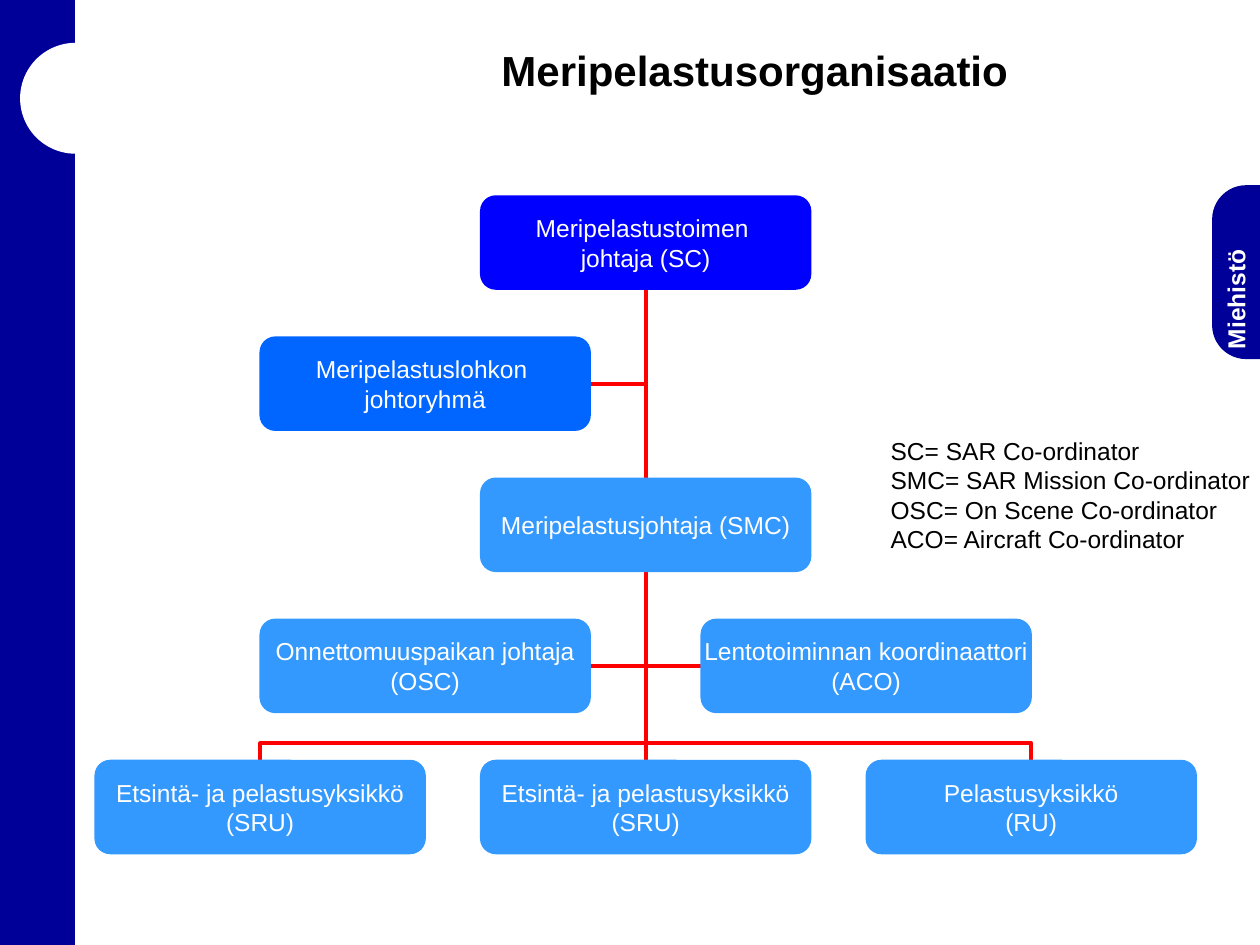
from lxml.etree import SubElement
from pptx import Presentation
from pptx.dml.color import RGBColor
from pptx.enum.shapes import MSO_CONNECTOR, MSO_SHAPE
from pptx.enum.text import MSO_ANCHOR, PP_ALIGN
from pptx.oxml.ns import qn
from pptx.util import Inches, Pt

NAVY = RGBColor(0x00, 0x00, 0x99)
BLUE = RGBColor(0x00, 0x00, 0xFF)
AZURE = RGBColor(0x00, 0x66, 0xFF)
SKY = RGBColor(0x33, 0x99, 0xFF)
RED = RGBColor(0xFF, 0x00, 0x00)
WHITE = RGBColor(0xFF, 0xFF, 0xFF)
BLACK = RGBColor(0x00, 0x00, 0x00)

CARD_W, CARD_H, ROW_STEP = 2.63, 0.75, 1.12
SIDE, WING = 1.75, 3.06
CARDS = [
    (0, 0, BLUE, "Meripelastustoimen \njohtaja (SC)"),
    (-SIDE, 1, AZURE, "Meripelastuslohkon \njohtoryhmä"),
    (0, 2, SKY, "Meripelastusjohtaja (SMC)"),
    (-SIDE, 3, SKY, "Onnettomuuspaikan johtaja\n(OSC)"),
    (SIDE, 3, SKY, "Lentotoiminnan koordinaattori\n(ACO)"),
    (-WING, 4, SKY, "Etsintä- ja pelastusyksikkö\n(SRU)"),
    (0, 4, SKY, "Etsintä- ja pelastusyksikkö\n(SRU)"),
    (WING, 4, SKY, "Pelastusyksikkö\n(RU)"),
]
TERMS = """SC= SAR Co-ordinator
SMC= SAR Mission Co-ordinator
OSC= On Scene Co-ordinator
ACO= Aircraft Co-ordinator"""


def write(shape, text, color, size=14, bold=False, align=PP_ALIGN.CENTER,
          anchor=MSO_ANCHOR.MIDDLE, inset=None, wrap=False):
    """Fill a shape with styled text."""
    frame = shape.text_frame
    frame.text = text
    frame.word_wrap = wrap
    frame.vertical_anchor = anchor
    if inset is not None:
        frame.margin_left = frame.margin_right = Inches(inset)
        frame.margin_top = frame.margin_bottom = Inches(inset)
    for para in frame.paragraphs:
        para.alignment = align
        font = para.font
        font.name, font.size, font.bold = "Arial", Pt(size), bold
        font.color.rgb = color


def add_block(slide, box, fill, kind=MSO_SHAPE.ROUNDED_RECTANGLE, curve=None):
    """Add a flat filled shape."""
    block = slide.shapes.add_shape(kind, *map(Inches, box))
    block.shadow.inherit = False
    block.fill.solid()
    block.fill.fore_color.rgb = fill
    block.line.fill.background()
    if curve is not None:
        block.adjustments[0] = curve
    return block


def add_label(slide, box, text, color, **style):
    """Add a text box."""
    label = slide.shapes.add_textbox(*map(Inches, box))
    write(label, text, color, **style)
    return label


def add_line(slide, start, end):
    """Add a straight red line."""
    line = slide.shapes.add_connector(
        MSO_CONNECTOR.STRAIGHT, *map(Inches, (*start, *end)))
    line.line.color.rgb = RED
    line.line.width = Pt(2.25)
    SubElement(line.element.spPr, qn("a:effectLst"))


def add_bus(slide, points):
    """Add an open red line with corners."""
    first, *rest = [tuple(map(Inches, point)) for point in points]
    path = slide.shapes.build_freeform(*first)
    path.add_line_segments(rest, close=False)
    bus = path.convert_to_shape()
    bus.shadow.inherit = False
    bus.fill.background()
    bus.line.color.rgb = RED
    bus.line.width = Pt(2.25)


def add_frame(slide, width, height):
    """Add the side bar with its round notch."""
    bar = add_block(slide, (0, 0, width, height), NAVY, MSO_SHAPE.RECTANGLE)
    bar.line.color.rgb = NAVY
    bar.line.width = Pt(0.75)
    add_block(slide, (0.16, 0.34, 2.5, 0.88), WHITE, curve=0.5)


def add_tab(slide, box):
    """Add the section tab with its upright name."""
    left, top, _, height = box
    add_block(slide, box, NAVY, curve=0.36)
    name = add_label(slide, (left + 0.07, top + 0.08, 0.28, height - 0.16),
                     "Miehistö", WHITE, bold=True, align=PP_ALIGN.LEFT,
                     anchor=MSO_ANCHOR.TOP, inset=0, wrap=True)
    name.element.txBody.bodyPr.set("vert", "vert270")


def add_chain(slide, left, top, width):
    """Add the chain of command, lines first and cards above them."""
    mid = left + width / 2
    rows = [top + ROW_STEP * row for row in range(5)]
    edge = SIDE - CARD_W / 2
    bus = rows[4] - 0.13
    for high, low in ((0, 2), (2, 4)):
        add_line(slide, (mid, rows[high] + CARD_H), (mid, rows[low]))
    for row, end in ((1, 0), (3, edge)):
        level = rows[row] + CARD_H / 2
        add_line(slide, (mid - edge, level), (mid + end, level))
    add_bus(slide, [(mid - WING, rows[4]), (mid - WING, bus),
                    (mid + WING, bus), (mid + WING, rows[4])])
    for shift, row, fill, text in CARDS:
        box = (mid + shift - CARD_W / 2, rows[row], CARD_W, CARD_H)
        write(add_block(slide, box, fill), text, WHITE, inset=0)


def main():
    """Build the slide and save it."""
    deck = Presentation()
    deck.slide_width, deck.slide_height = Inches(10), Inches(7.5)
    slide = deck.slides.add_slide(deck.slide_layouts[6])
    add_frame(slide, 0.59, 7.5)
    add_tab(slide, (9.62, 1.47, 0.75, 1.38))
    add_label(slide, (3.27, 0.05, 5.44, 1.01), "Meripelastusorganisaatio",
              BLACK, size=24, bold=True, wrap=True)
    add_chain(slide, 0.75, 1.55, 8.75)
    add_label(slide, (6.97, 3.41, 3.07, 1.45), TERMS, BLACK,
              align=PP_ALIGN.LEFT, anchor=MSO_ANCHOR.TOP)
    deck.save("out.pptx")


if __name__ == "__main__":
    main()
